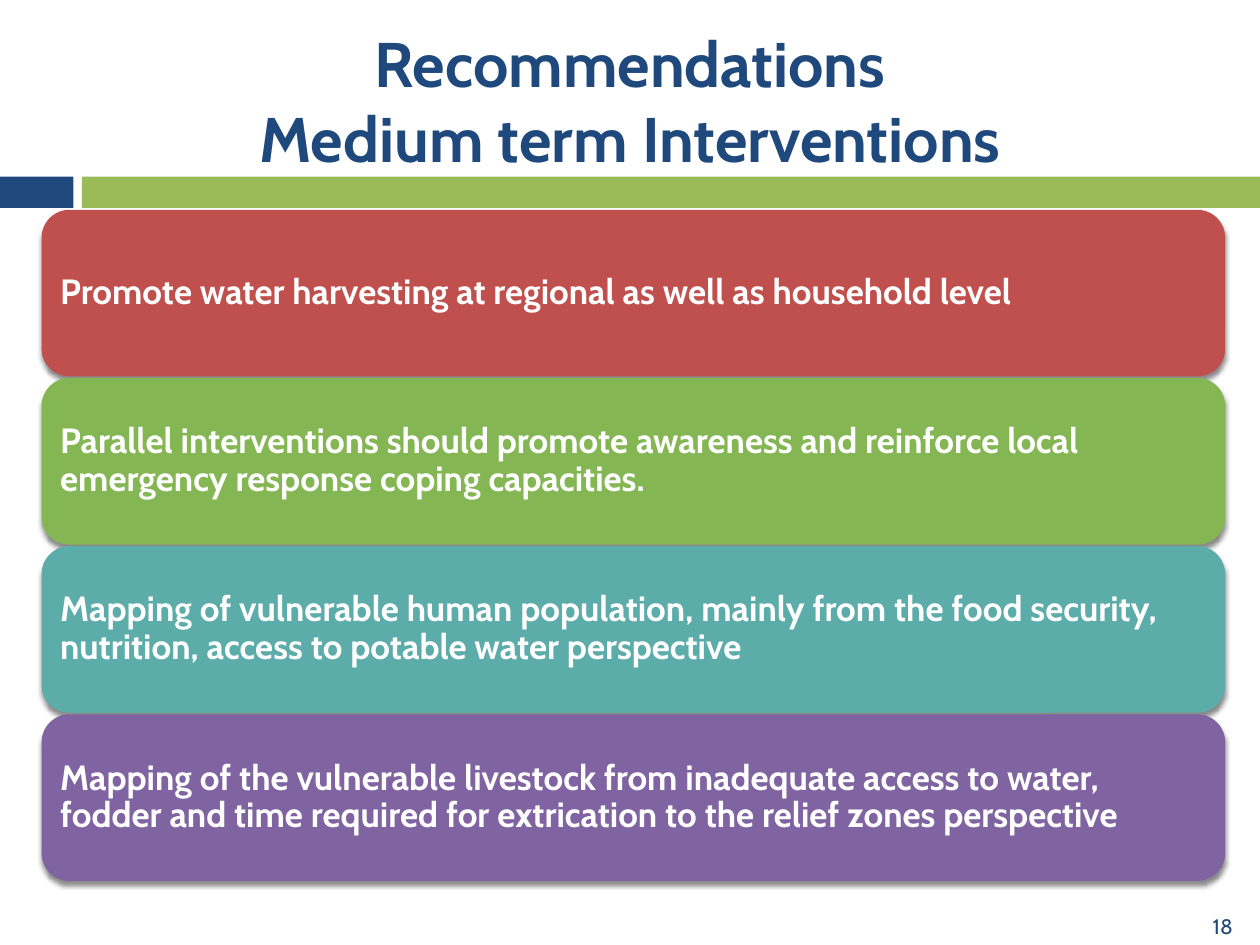
from lxml.etree import SubElement
from pptx import Presentation
from pptx.dml.color import RGBColor
from pptx.enum.shapes import MSO_SHAPE
from pptx.enum.text import MSO_ANCHOR, PP_ALIGN
from pptx.oxml.ns import qn
from pptx.util import Cm, Pt

FONT = "Cabin"
NAVY = RGBColor(0x1F, 0x49, 0x7D)
LIME = RGBColor(0x9B, 0xBB, 0x59)
RED = RGBColor(0xC0, 0x50, 0x4D)
GREEN = RGBColor(0x85, 0xB6, 0x54)
TEAL = RGBColor(0x5C, 0xAC, 0xAA)
PURPLE = RGBColor(0x80, 0x64, 0xA2)
WHITE = RGBColor(0xFF, 0xFF, 0xFF)

RECOMMENDATIONS = [
    ("Promote water harvesting at regional as well as household level", RED),
    ("Parallel interventions should promote awareness and reinforce local "
     "emergency response coping capacities.", GREEN),
    ("Mapping of vulnerable human population, mainly from the food security, "
     "nutrition, access to potable water perspective", TEAL),
    ("Mapping of the vulnerable livestock from inadequate access to water, "
     "fodder and time required for extrication to the relief zones perspective",
     PURPLE),
]


def add_run(paragraph, words, size, color, bold=False):
    run = paragraph.add_run()
    run.text = words
    run.font.name = FONT
    run.font.size = Pt(size)
    run.font.bold = bold
    run.font.color.rgb = color


def add_block(slide, kind, left, top, width, height, color):
    """Add a filled shape without line or shadow."""
    block = slide.shapes.add_shape(kind, left, top, width, height)
    block.shadow.inherit = False
    block.fill.solid()
    block.fill.fore_color.rgb = color
    block.line.fill.background()
    return block


def add_centred_lines(slide, left, top, width, height, lines, size, bold=False):
    """Add a text box with lines split by line breaks in one paragraph."""
    frame = slide.shapes.add_textbox(left, top, width, height).text_frame
    frame.word_wrap = True
    frame.vertical_anchor = MSO_ANCHOR.MIDDLE
    paragraph = frame.paragraphs[0]
    paragraph.alignment = PP_ALIGN.CENTER
    for number, line in enumerate(lines):
        if number:
            paragraph.add_line_break()
        add_run(paragraph, line, size, NAVY, bold)


def add_divider(slide, left, top, width, height):
    accent_width, gap = Cm(1.48), Cm(0.17)
    band_start = accent_width + gap
    add_block(slide, MSO_SHAPE.RECTANGLE, left, top, accent_width, height, NAVY)
    add_block(slide, MSO_SHAPE.RECTANGLE, left + band_start, top,
              width - band_start, height, LIME)


def add_soft_shadow(shape):
    effects = shape._element.spPr.find(qn("a:effectLst"))
    shadow = SubElement(effects, qn("a:outerShdw"), blurRad=str(Pt(3)),
                        dist=str(Pt(2.4)), dir="5400000", rotWithShape="0")
    black = SubElement(shadow, qn("a:srgbClr"), val="000000")
    SubElement(black, qn("a:alpha"), val="45000")


def add_card(slide, left, top, width, height, words, color):
    card = add_block(slide, MSO_SHAPE.ROUNDED_RECTANGLE,
                     left, top, width, height, color)
    add_soft_shadow(card)
    frame = card.text_frame
    frame.word_wrap = True
    frame.vertical_anchor = MSO_ANCHOR.MIDDLE
    frame.margin_left = frame.margin_right = Cm(0.21)
    frame.margin_top = frame.margin_bottom = Cm(0.21)
    paragraph = frame.paragraphs[0]
    paragraph.alignment = PP_ALIGN.LEFT
    paragraph.line_spacing = 0.9
    add_run(paragraph, words, 20, WHITE, bold=True)


def add_card_stack(slide, left, top, width, height, recommendations):
    gap = Cm(0.03)
    count = len(recommendations)
    card_height = (height - gap * (count - 1)) // count
    for row, (words, color) in enumerate(recommendations):
        add_card(slide, left, top + row * (card_height + gap),
                 width, card_height, words, color)


def main():
    deck = Presentation()
    deck.slide_width, deck.slide_height = Cm(25.4), Cm(19.05)
    slide = deck.slides.add_slide(deck.slide_layouts[6])
    add_divider(slide, 0, Cm(3.56), deck.slide_width, Cm(0.63))
    add_centred_lines(slide, Cm(2.12), Cm(0.64), Cm(21.16), Cm(2.74),
                      ["Recommendations", "Medium term Interventions"], 36, True)
    add_centred_lines(slide, Cm(23.9), Cm(18.29), Cm(1.5), Cm(0.76), ["18"], 12)
    add_card_stack(slide, Cm(0.84), Cm(4.23), Cm(23.86), Cm(13.53),
                   RECOMMENDATIONS)
    deck.save("out.pptx")


if __name__ == "__main__":
    main()
